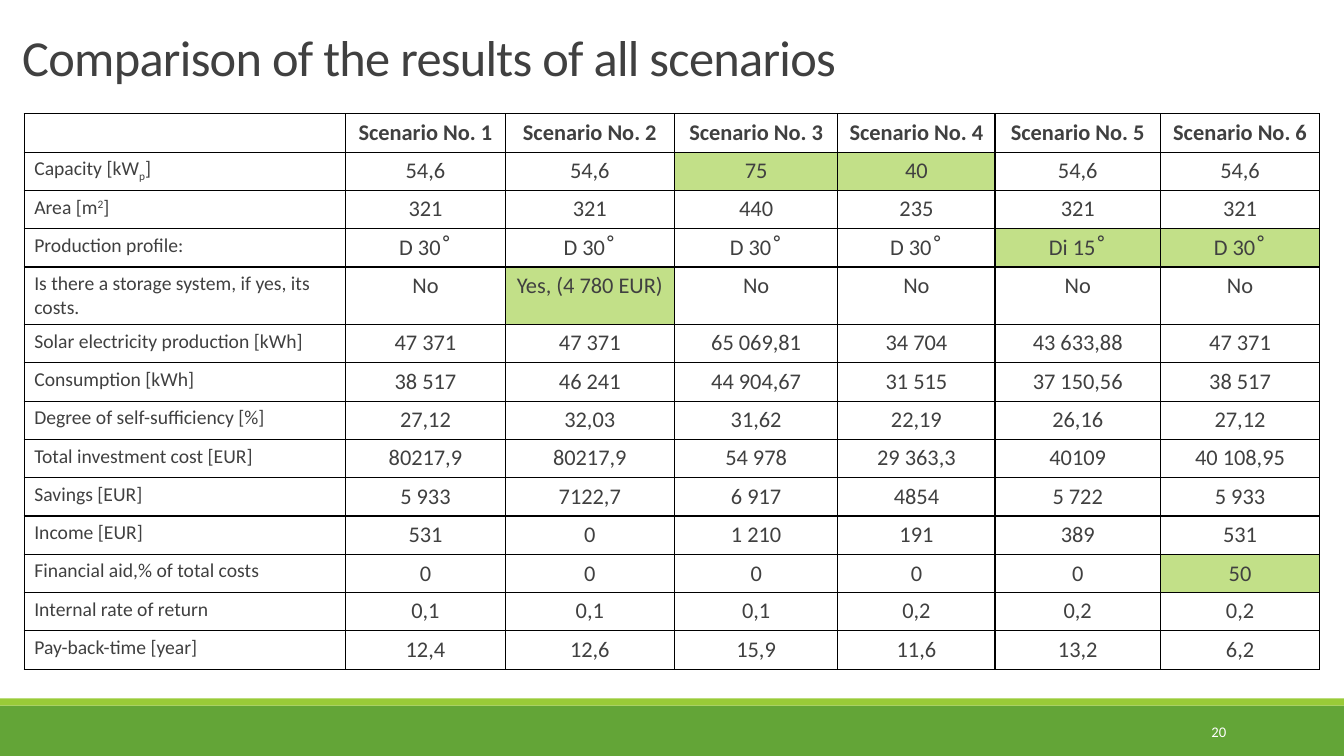
"""Build the slide that compares the results of all solar scenarios."""
from dataclasses import dataclass

from lxml.etree import SubElement
from pptx import Presentation
from pptx.dml.color import RGBColor
from pptx.enum.shapes import MSO_SHAPE
from pptx.enum.text import MSO_ANCHOR as Anchor, MSO_AUTO_SIZE as AutoSize, PP_ALIGN as Align
from pptx.oxml.ns import qn
from pptx.util import Inches, Pt


@dataclass(frozen=True)
class Theme:
    font: str = "Calibri"
    symbol_font: str = "DejaVu Sans"
    ink: str = "404040"
    white: str = "FFFFFF"
    grid: str = "000000"
    highlight: str = "C2E088"
    band: str = "63A537"
    stripe: str = "99CB38"
    title_size: float = 36
    value_size: float = 16
    label_size: float = 14
    number_size: float = 10.5


@dataclass(frozen=True)
class Bar:
    top: float
    height: float
    color: str


@dataclass(frozen=True)
class Piece:
    text: str
    baseline: int = 0
    symbol: bool = False


@dataclass(frozen=True)
class Measure:
    label: tuple[Piece, ...]
    values: tuple[str, ...]
    changed: tuple[int, ...] = ()
    height: float = 0.38
    anchor: Anchor = Anchor.TOP


THEME = Theme()
SLIDE_WIDTH, SLIDE_HEIGHT = 13.33, 7.5
BARS = (Bar(7, 0.5, THEME.band), Bar(6.93, 0.07, THEME.stripe))
COLUMN_WIDTHS = (3.19, 1.58, 1.68, 1.62, 1.56, 1.64, 1.58)
HEADER_HEIGHT = 0.38
DEGREE = "˚"


def measure(label: str, values: str, **options) -> Measure:
    """Make a measure with a plain label from values parted by bars."""
    return Measure((Piece(label),), tuple(values.split("|")), **options)


MEASURES = (
    Measure((Piece("Capacity [kW"), Piece("p", -25), Piece("]")),
            ("54,6", "54,6", "75", "40", "54,6", "54,6"), changed=(3, 4)),
    Measure((Piece("Area [m"), Piece("2", 30), Piece("]")),
            ("321", "321", "440", "235", "321", "321")),
    measure("Production profile:", "D 30˚|D 30˚|D 30˚|D 30˚|Di 15˚|D 30˚", changed=(5, 6)),
    measure("Is there a storage system, if yes, its costs.",
            "No|Yes, (4 780 EUR)|No|No|No|No", changed=(2,), height=0.57),
    measure("Solar electricity production [kWh]",
            "47 371|47 371|65 069,81|34 704|43 633,88|47 371"),
    measure("Consumption [kWh]", "38 517|46 241|44 904,67|31 515|37 150,56|38 517"),
    measure("Degree of self-sufficiency [%]", "27,12|32,03|31,62|22,19|26,16|27,12"),
    measure("Total investment cost [EUR]",
            "80217,9|80217,9|54 978|29 363,3|40109|40 108,95"),
    measure("Savings [EUR]", "5 933|7122,7|6 917|4854|5 722|5 933"),
    measure("Income [EUR]", "531|0|1 210|191|389|531"),
    measure("Financial aid,% of total costs", "0|0|0|0|0|50", changed=(6,),
            anchor=Anchor.MIDDLE),
    measure("Internal rate of return", "0,1|0,1|0,1|0,2|0,2|0,2"),
    measure("Pay-back-time [year]", "12,4|12,6|15,9|11,6|13,2|6,2"),
)


def style(font, size: float, color: str, bold: bool = False, name: str = THEME.font) -> None:
    """Give a font its face, size, colour and weight."""
    font.name, font.size, font.bold = name, Pt(size), bold
    font.color.rgb = RGBColor.from_string(color)


def place(shape, left: float, top: float, width: float, height: float) -> None:
    """Move and size a shape in inches."""
    shape.left, shape.top = Inches(left), Inches(top)
    shape.width, shape.height = Inches(width), Inches(height)


def add_bar(slide, bar: Bar) -> None:
    """Draw a full-width footer bar."""
    strip = slide.shapes.add_shape(MSO_SHAPE.RECTANGLE, 0, Inches(bar.top),
                                   Inches(SLIDE_WIDTH), Inches(bar.height))
    strip.shadow.inherit = False
    strip.fill.solid()
    strip.fill.fore_color.rgb = RGBColor.from_string(bar.color)
    strip.line.fill.background()


def add_title(slide, wording: str) -> None:
    """Fill and format the title placeholder."""
    title = slide.shapes.title
    place(title, 0.12, 0.04, 11, 0.87)
    frame = title.text_frame
    frame.text = wording
    frame.word_wrap, frame.auto_size = True, AutoSize.NONE
    frame.vertical_anchor = Anchor.BOTTOM
    line = frame.paragraphs[0]
    line.alignment, line.line_spacing = Align.LEFT, 0.85
    style(line.runs[0].font, THEME.title_size, THEME.ink)
    line.runs[0]._r.get_or_add_rPr().set("spc", "-50")


def add_page_number(slide, number: str) -> None:
    """Write the page number on the footer bar."""
    page = slide.shapes.add_textbox(Inches(10.83), Inches(7.06), Inches(1.43), Inches(0.4))
    frame = page.text_frame
    frame.text = number
    frame.word_wrap, frame.vertical_anchor = True, Anchor.MIDDLE
    frame.paragraphs[0].alignment = Align.RIGHT
    style(frame.paragraphs[0].runs[0].font, THEME.number_size, THEME.white)


def format_cell(cell, fill: str, anchor: Anchor) -> None:
    """Border, fill and anchor a table cell."""
    cell.vertical_anchor = anchor
    properties = cell._tc.get_or_add_tcPr()
    for side in ("a:lnL", "a:lnR", "a:lnT", "a:lnB"):
        border = SubElement(properties, qn(side), w=str(Pt(1)))
        SubElement(SubElement(border, qn("a:solidFill")), qn("a:srgbClr"), val=THEME.grid)
    cell.fill.solid()
    cell.fill.fore_color.rgb = RGBColor.from_string(fill)


def write_cell(cell, pieces: tuple[Piece, ...], size: float, align: Align,
               bold: bool = False) -> None:
    """Write the pieces of a cell as formatted runs."""
    line = cell.text_frame.paragraphs[0]
    line.alignment = align
    for piece in pieces:
        run = line.add_run()
        run.text = piece.text
        style(run.font, size, THEME.ink, bold,
              THEME.symbol_font if piece.symbol else THEME.font)
        if piece.baseline:
            run._r.get_or_add_rPr().set("baseline", str(piece.baseline * 1000))
    if not pieces:
        SubElement(line._p, qn("a:endParaRPr"), sz=str(int(size * 100)))


def value_pieces(value: str) -> tuple[Piece, ...]:
    """Part a value from its degree sign."""
    number, sign, _ = value.partition(DEGREE)
    return (Piece(number), Piece(sign, symbol=True)) if sign else (Piece(number),)


def add_results(slide) -> None:
    """Add the table of measures by scenario."""
    heights = (HEADER_HEIGHT, *(row.height for row in MEASURES))
    table = slide.shapes.add_table(len(heights), len(COLUMN_WIDTHS), Inches(0.24), Inches(1.13),
                                   Inches(sum(COLUMN_WIDTHS)), Inches(sum(heights))).table
    table.first_row = table.horz_banding = False
    for column, width in zip(table.columns, COLUMN_WIDTHS):
        column.width = Inches(width)
    for row, height in zip(table.rows, heights):
        row.height = Inches(height)
    for number in range(len(COLUMN_WIDTHS)):
        heading = (Piece(f"Scenario No. {number}"),) if number else ()
        format_cell(table.cell(0, number), THEME.white, Anchor.MIDDLE)
        write_cell(table.cell(0, number), heading, THEME.value_size, Align.CENTER, bold=True)
    for index, entry in enumerate(MEASURES, 1):
        format_cell(table.cell(index, 0), THEME.white, Anchor.TOP)
        write_cell(table.cell(index, 0), entry.label, THEME.label_size, Align.LEFT)
        for scenario, value in enumerate(entry.values, 1):
            fill = THEME.highlight if scenario in entry.changed else THEME.white
            format_cell(table.cell(index, scenario), fill, entry.anchor)
            write_cell(table.cell(index, scenario), value_pieces(value),
                       THEME.value_size, Align.CENTER)


def main() -> None:
    """Build and save the presentation."""
    deck = Presentation()
    deck.slide_width, deck.slide_height = Inches(SLIDE_WIDTH), Inches(SLIDE_HEIGHT)
    slide = deck.slides.add_slide(deck.slide_layouts[5])
    for bar in BARS:
        add_bar(slide, bar)
    add_title(slide, "Comparison of the results of all scenarios")
    add_page_number(slide, "20")
    add_results(slide)
    deck.save("out.pptx")


if __name__ == "__main__":
    main()
